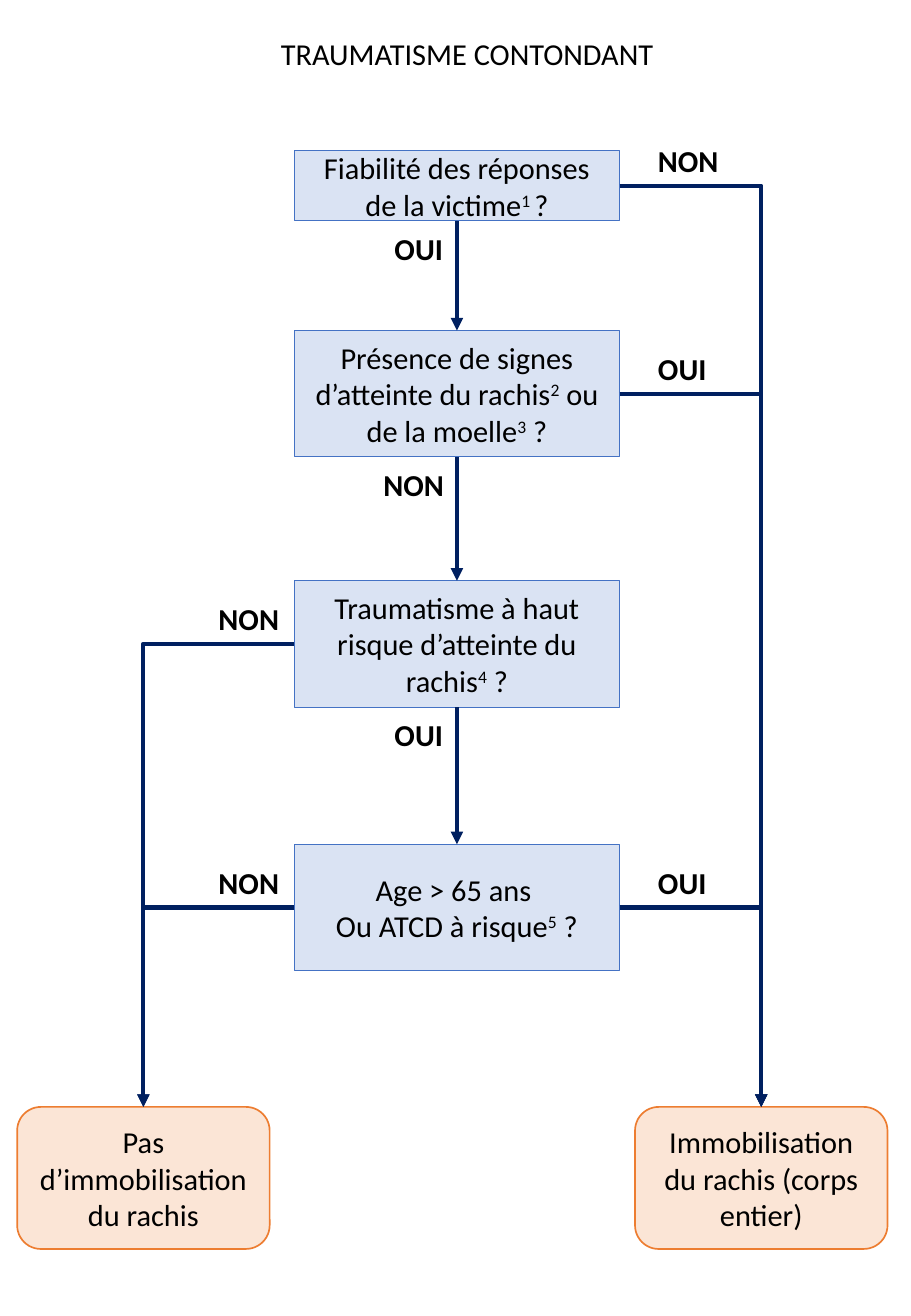
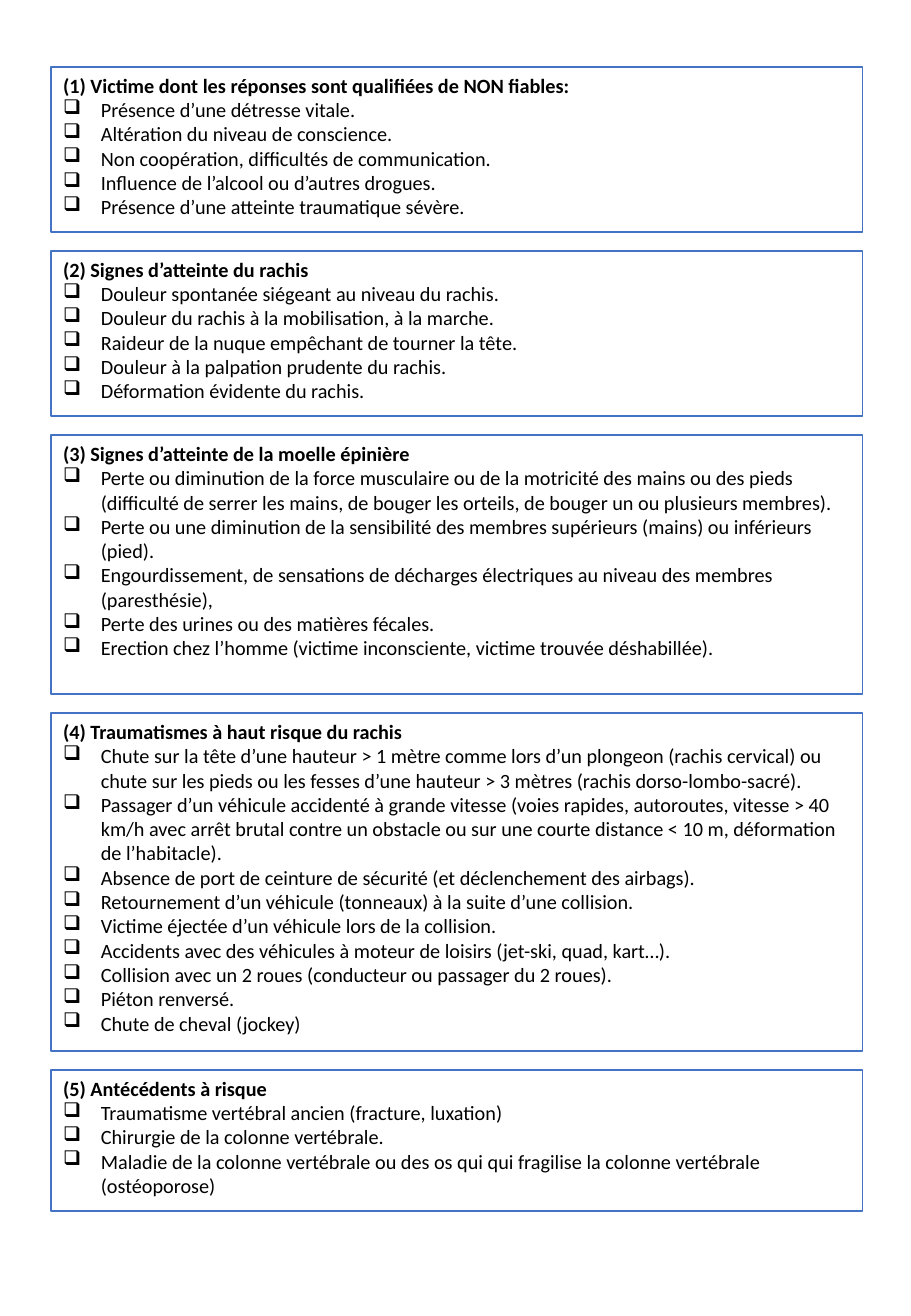
"""Build the two-page spinal immobilisation decision guide."""
from dataclasses import dataclass

from lxml import etree
from pptx import Presentation
from pptx.dml.color import RGBColor
from pptx.enum.shapes import MSO_CONNECTOR, MSO_SHAPE
from pptx.enum.text import MSO_ANCHOR, MSO_AUTO_SIZE, PP_ALIGN
from pptx.oxml.ns import qn
from pptx.util import Cm, Pt

RECTANGLE, ROUNDED = MSO_SHAPE.RECTANGLE, MSO_SHAPE.ROUNDED_RECTANGLE
STRAIGHT, ELBOW = MSO_CONNECTOR.STRAIGHT, MSO_CONNECTOR.ELBOW
TOP, MIDDLE = MSO_ANCHOR.TOP, MSO_ANCHOR.MIDDLE
LEFT, CENTER = PP_ALIGN.LEFT, PP_ALIGN.CENTER
NO_FIT, GROW = MSO_AUTO_SIZE.NONE, MSO_AUTO_SIZE.SHAPE_TO_FIT_TEXT
TITLE_ONLY, BLANK = 5, 6
SITE_TOP, SITE_LEFT, SITE_BOTTOM, SITE_RIGHT = range(4)


@dataclass(frozen=True)
class Theme:
    """Colours, font and type sizes shared by both pages."""

    font: str = "Calibri"
    chart_size: float = 18
    list_size: float = 12
    text: str = "000000"
    white: str = "FFFFFF"
    question: str = "DAE3F3"
    blue: str = "4472C4"
    outcome: str = "FBE5D6"
    orange: str = "ED7D31"
    arrow: str = "002060"
    arrow_width: float = 2.5


@dataclass(frozen=True)
class Question:
    """One question of the flowchart; odd items of a line are superscripts."""

    top: float
    height: float
    lines: tuple
    left: str = ""
    down: str = ""
    right: str = ""


THEME = Theme()

QUESTION_LEFT, QUESTION_WIDTH = 6.15, 6.81
OUTCOME_TOP, OUTCOME_WIDTH, OUTCOME_HEIGHT = 23.14, 5.28, 2.97
LABEL_WIDTH, LABEL_HEIGHT = 1.85, 1.02
LEFT_LABEL, RIGHT_LABEL = 4.32, 13.51
DOWN_LABEL = {"OUI": 8, "NON": 7.77}
PANEL_LEFT, PANEL_TOP, PANEL_WIDTH, PANEL_GAP = 1.07, 1.4, 16.97, 0.4
BULLET_INDENT = 0.79

QUESTIONS = (
    Question(3.15, 1.47, (("Fiabilité des réponses de la victime", "1 ", "?"),),
             down="OUI", right="NON"),
    Question(6.91, 2.64, (("Présence de signes d’atteinte du rachis", "2",
                           " ou de la moelle", "3", " ?"),),
             down="NON", right="OUI"),
    Question(12.14, 2.64, (("Traumatisme à haut risque d’atteinte du rachis", "4", " ?"),),
             left="NON", down="OUI"),
    Question(17.65, 2.64, (("Age > 65 ans ",), ("Ou ATCD à risque", "5", " ?")),
             left="NON", right="OUI"),
)

PANELS = (
    (3.45, "(1) Victime dont les réponses sont qualifiées de NON fiables:", (
        "Présence d’une détresse vitale.",
        "Altération du niveau de conscience.",
        "Non coopération, difficultés de communication.",
        "Influence de l’alcool ou d’autres drogues.",
        "Présence d’une atteinte traumatique sévère.",
    )),
    (3.45, "(2) Signes d’atteinte du rachis", (
        "Douleur spontanée siégeant au niveau du rachis.",
        "Douleur du rachis à la mobilisation, à la marche.",
        "Raideur de la nuque empêchant de tourner la tête.",
        "Douleur à la palpation prudente du rachis.",
        "Déformation évidente du rachis.",
    )),
    (5.41, "(3) Signes d’atteinte de la moelle épinière", (
        "Perte ou diminution de la force musculaire ou de la motricité des mains ou des pieds "
        "(difficulté de serrer les mains, de bouger les orteils, de bouger un ou plusieurs "
        "membres).",
        "Perte ou une diminution de la sensibilité des membres supérieurs (mains) ou "
        "inférieurs (pied).",
        "Engourdissement, de sensations de décharges électriques au niveau des membres "
        "(paresthésie),",
        "Perte des urines ou des matières fécales.",
        "Erection chez l’homme (victime inconsciente, victime trouvée déshabillée).",
    )),
    (7.06, "(4) Traumatismes à haut risque du rachis", (
        "Chute sur la tête d’une hauteur > 1 mètre comme lors d’un plongeon (rachis cervical) "
        "ou chute sur les pieds ou les fesses d’une hauteur > 3 mètres (rachis "
        "dorso-lombo-sacré).",
        "Passager d’un véhicule accidenté à grande vitesse (voies rapides, autoroutes, "
        "vitesse > 40 km/h avec arrêt brutal contre un obstacle ou sur une courte distance "
        "< 10 m, déformation de l’habitacle).",
        "Absence de port de ceinture de sécurité (et déclenchement des airbags).",
        "Retournement d’un véhicule (tonneaux) à la suite d’une collision.",
        "Victime éjectée d’un véhicule lors de la collision.",
        "Accidents avec des véhicules à moteur de loisirs (jet-ski, quad, kart…).",
        "Collision avec un 2 roues (conducteur ou passager du 2 roues).",
        "Piéton renversé.",
        "Chute de cheval (jockey)",
    )),
    (2.95, "(5) Antécédents à risque", (
        "Traumatisme vertébral ancien (fracture, luxation)",
        "Chirurgie de la colonne vertébrale.",
        "Maladie de la colonne vertébrale ou des os qui qui fragilise la colonne vertébrale "
        "(ostéoporose)",
    )),
)


def add_span(para, text, size, bold=False, raised=False):
    """Add one formatted run to a paragraph."""
    span = para.add_run()
    span.text = text
    span.font.name = THEME.font
    span.font.size = Pt(size)
    span.font.bold = bold
    span.font.color.rgb = RGBColor.from_string(THEME.text)
    if raised:
        span._r.get_or_add_rPr().set("baseline", "30000")


def add_para(frame, align):
    """Return the empty first paragraph, or a new one, aligned."""
    first = frame.paragraphs[0]
    para = frame.add_paragraph() if first.runs else first
    para.alignment = align
    return para


def add_bullet(para):
    """Give a paragraph a hanging check-box bullet."""
    properties = para._p.get_or_add_pPr()
    properties.set("marL", str(Cm(BULLET_INDENT)))
    properties.set("indent", str(-Cm(BULLET_INDENT)))
    etree.SubElement(properties, qn("a:buChar")).set("char", "❑")


def add_box(page, kind, place, fill, line, line_width, anchor=MIDDLE):
    """Add a filled, outlined shape ready for text."""
    box = page.shapes.add_shape(kind, *map(Cm, place))
    box.shadow.inherit = False
    box.fill.solid()
    box.fill.fore_color.rgb = RGBColor.from_string(fill)
    box.line.color.rgb = RGBColor.from_string(line)
    box.line.width = Pt(line_width)
    box.text_frame.word_wrap = True
    box.text_frame.vertical_anchor = anchor
    return box


def add_question(page, question):
    """Add a question box with its superscript references."""
    place = QUESTION_LEFT, question.top, QUESTION_WIDTH, question.height
    box = add_box(page, RECTANGLE, place, THEME.question, THEME.blue, 0.5)
    for line in question.lines:
        para = add_para(box.text_frame, CENTER)
        for position, text in enumerate(line):
            add_span(para, text, THEME.chart_size, raised=position % 2 == 1)
    return box


def add_outcome(page, left, text):
    """Add a rounded outcome box."""
    place = left, OUTCOME_TOP, OUTCOME_WIDTH, OUTCOME_HEIGHT
    box = add_box(page, ROUNDED, place, THEME.outcome, THEME.orange, 1)
    add_span(add_para(box.text_frame, CENTER), text, THEME.chart_size)
    return box


def add_label(page, left, top, text):
    """Add a bold answer beside an arrow."""
    label = page.shapes.add_textbox(*map(Cm, (left, top, LABEL_WIDTH, LABEL_HEIGHT)))
    label.text_frame.word_wrap = True
    label.text_frame.auto_size = GROW
    add_span(add_para(label.text_frame, LEFT), text, THEME.chart_size, bold=True)


def add_arrow(page, kind, source, source_site, target):
    """Join a box to the top of another with an arrow."""
    arrow = page.shapes.add_connector(kind, 0, 0, 0, 0)
    arrow.begin_connect(source, source_site)
    arrow.end_connect(target, SITE_TOP)
    arrow.line.color.rgb = RGBColor.from_string(THEME.arrow)
    arrow.line.width = Pt(THEME.arrow_width)
    properties = arrow.element.spPr
    if kind == ELBOW:
        properties.find(qn("a:prstGeom")).set("prst", "bentConnector2")
    etree.SubElement(properties.find(qn("a:ln")), qn("a:tailEnd")).set("type", "triangle")
    etree.SubElement(properties, qn("a:effectLst"))


def add_title(page, text):
    """Move and fill the title placeholder."""
    title = page.shapes.title
    title.left, title.top, title.width, title.height = map(Cm, (1.45, 0.61, 16.64, 1.02))
    title.text_frame.auto_size = NO_FIT
    title.text_frame.vertical_anchor = TOP
    add_span(add_para(title.text_frame, CENTER), text, THEME.chart_size)


def add_panel(page, top, height, heading, items):
    """Add an outlined panel with a heading and a check list."""
    place = PANEL_LEFT, top, PANEL_WIDTH, height
    box = add_box(page, RECTANGLE, place, THEME.white, THEME.blue, 1, TOP)
    add_span(add_para(box.text_frame, LEFT), heading, THEME.list_size, bold=True)
    for item in items:
        para = add_para(box.text_frame, LEFT)
        add_bullet(para)
        add_span(para, item, THEME.list_size)


def build_flowchart(deck):
    """Build the decision flowchart page."""
    page = deck.slides.add_slide(deck.slide_layouts[TITLE_ONLY])
    add_title(page, "TRAUMATISME CONTONDANT")
    boxes = [add_question(page, question) for question in QUESTIONS]
    immobilise = add_outcome(page, 13.28, "Immobilisation du rachis (corps entier)")
    release = add_outcome(page, 0.36, "Pas d’immobilisation du rachis")
    for question, box, following in zip(QUESTIONS, boxes, boxes[1:] + [None]):
        side_top = question.top + question.height / 2 - 1.03
        if question.left:
            add_arrow(page, ELBOW, box, SITE_LEFT, release)
            add_label(page, LEFT_LABEL, side_top, question.left)
        if question.right:
            add_arrow(page, ELBOW, box, SITE_RIGHT, immobilise)
            add_label(page, RIGHT_LABEL, side_top, question.right)
        if question.down:
            add_arrow(page, STRAIGHT, box, SITE_BOTTOM, following)
            down_top = question.top + question.height + 0.07
            add_label(page, DOWN_LABEL[question.down], down_top, question.down)


def build_criteria(deck):
    """Build the page of numbered criteria panels."""
    page = deck.slides.add_slide(deck.slide_layouts[BLANK])
    top = PANEL_TOP
    for height, heading, items in PANELS:
        add_panel(page, top, height, heading, items)
        top += height + PANEL_GAP


def main():
    """Build and save the deck."""
    deck = Presentation()
    deck.slide_width, deck.slide_height = Cm(19.05), Cm(27.51)
    build_flowchart(deck)
    build_criteria(deck)
    deck.save("out.pptx")


if __name__ == "__main__":
    main()
